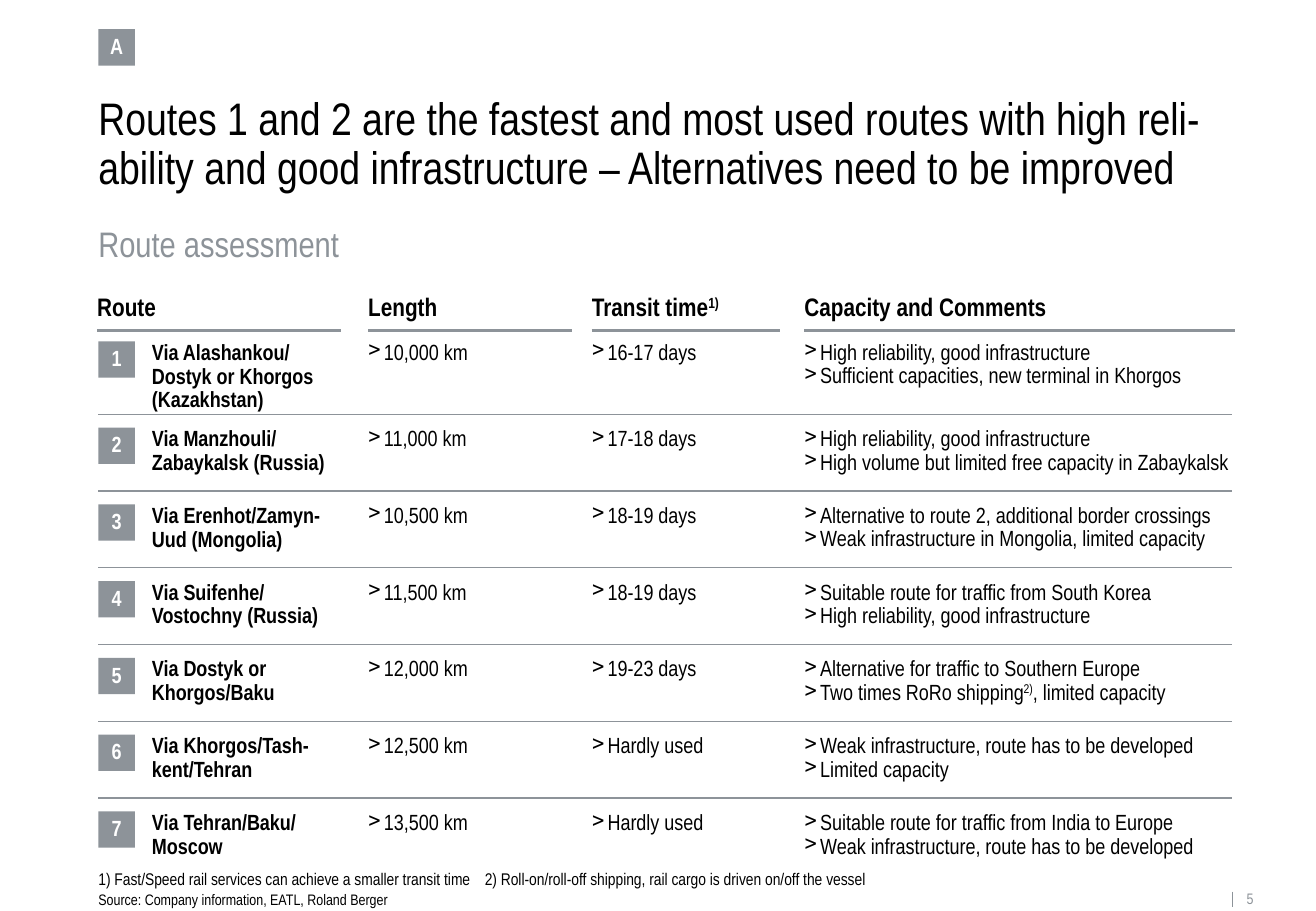
from lxml.etree import SubElement
from pptx import Presentation
from pptx.dml.color import RGBColor
from pptx.enum.shapes import MSO_CONNECTOR as Connector, MSO_SHAPE as Shape
from pptx.enum.text import MSO_ANCHOR as Anchor, PP_ALIGN as Align
from pptx.oxml.ns import qn
from pptx.util import Inches, Pt

COLORS = {"grey": "8D9399", "black": "000000", "white": "FFFFFF"}
FONT = "Arial Narrow"
LEFT, RIGHT = 0.81, 10.14
BADGE = 0.3
BULLET_INDENT = 0.13
NAME_LEFT, NAME_WIDTH = 1.25, 1.55
HEADER_TOP, HEADER_HEIGHT = 2.42, 0.31
FIRST_ROW_TOP, SECOND_ROW_TOP, ROW_STEP = 2.81, 3.52, 0.632
RULE_GAP = 0.11

COLUMNS = [
    ("Route", 0.8, 2.01),
    ("Length", 3.03, 1.68),
    ("Transit time^1)", 4.87, 1.55),
    ("Capacity and Comments", 6.62, 3.54),
]
ROUTES = [
    ("Via Alashankou/ Dostyk or Khorgos (Kazakhstan)", "10,000 km", "16-17 days",
     ["High reliability, good infrastructure", "Sufficient capacities, new terminal in Khorgos"]),
    ("Via Manzhouli/ Zabaykalsk (Russia)", "11,000 km", "17-18 days",
     ["High reliability, good infrastructure", "High volume but limited free capacity in Zabaykalsk"]),
    ("Via Erenhot/Zamyn-Uud (Mongolia)", "10,500 km", "18-19 days",
     ["Alternative to route 2, additional border crossings", "Weak infrastructure in Mongolia, limited capacity"]),
    ("Via Suifenhe/ Vostochny (Russia)", "11,500 km", "18-19 days",
     ["Suitable route for traffic from South Korea", "High reliability, good infrastructure"]),
    ("Via Dostyk or Khorgos/Baku", "12,000 km", "19-23 days",
     ["Alternative for traffic to Southern Europe", "Two times RoRo shipping^2)^, limited capacity"]),
    ("Via Khorgos/Tash-kent/Tehran", "12,500 km", "Hardly used",
     ["Weak infrastructure, route has to be developed", "Limited capacity"]),
    ("Via Tehran/Baku/ Moscow", "13,500 km", "Hardly used",
     ["Suitable route for traffic from India to Europe", "Weak infrastructure, route has to be developed"]),
]

presentation = Presentation()
presentation.slide_width, presentation.slide_height = Inches(10.83), Inches(7.5)
slide = presentation.slides.add_slide(presentation.slide_layouts[6])


def add_text(box, lines, size=13, color="black", bold=False, bullet=False, badge=False,
             anchor=Anchor.TOP, bottom=0, wrap=True, tab=None):
    bounds = [Inches(length) for length in box]
    if badge:
        shape = slide.shapes.add_shape(Shape.RECTANGLE, *bounds)
        shape.shadow.inherit = False
        shape.fill.solid()
        shape.fill.fore_color.rgb = RGBColor.from_string(COLORS["grey"])
        shape.line.fill.background()
    else:
        shape = slide.shapes.add_textbox(*bounds)
    frame = shape.text_frame
    frame.margin_left = frame.margin_right = frame.margin_top = 0
    frame.margin_bottom = Inches(bottom)
    frame.word_wrap = wrap
    frame.vertical_anchor = anchor
    for index, line in enumerate(lines):
        paragraph = frame.paragraphs[0] if index == 0 else frame.add_paragraph()
        properties = paragraph._p.get_or_add_pPr()
        if bullet:
            properties.set("marL", str(Inches(BULLET_INDENT)))
            properties.set("indent", str(-Inches(BULLET_INDENT)))
            SubElement(properties, qn("a:buChar"), char=">")
        if tab:
            tabs = SubElement(properties, qn("a:tabLst"))
            SubElement(tabs, qn("a:tab"), pos=str(Inches(tab)), algn="l")
        paragraph.line_spacing = 0.9
        paragraph.alignment = Align.CENTER if badge else Align.LEFT
        for part, text in enumerate(line.split("^")):
            if not text:
                continue
            run = paragraph.add_run()
            run.text = text
            run.font.name, run.font.size, run.font.bold = FONT, Pt(size), bold
            run.font.color.rgb = RGBColor.from_string(COLORS[color])
            if part % 2:
                run._r.get_or_add_rPr().set("baseline", "30000")


def add_rule(start_x, start_y, end_x, end_y, width=0.75):
    rule = slide.shapes.add_connector(
        Connector.STRAIGHT, *(Inches(length) for length in (start_x, start_y, end_x, end_y)))
    rule.line.color.rgb = RGBColor.from_string(COLORS["grey"])
    rule.line.width = Pt(width)
    SubElement(rule._element.spPr, qn("a:effectLst"))


badge_style = dict(color="white", bold=True, badge=True, anchor=Anchor.MIDDLE, wrap=False)

add_text((LEFT, 0.24, BADGE, BADGE), ["A"], **badge_style)
add_text((LEFT, 0.79, 9.34, 0.82),
         ["Routes 1 and 2 are the fastest and most used routes with high reli-ability "
          "and good infrastructure – Alternatives need to be improved"], size=27)
add_text((LEFT, 1.87, 9.34, 0.33), ["Route assessment"], size=21, color="grey")

for heading, left, width in COLUMNS:
    add_text((left, HEADER_TOP, width, HEADER_HEIGHT), [heading], size=15, bold=True,
             anchor=Anchor.BOTTOM, bottom=0.08)
    rule_y = HEADER_TOP + HEADER_HEIGHT - 0.01
    add_rule(left, rule_y, left + width, rule_y, width=1.5)

for index, (name, length, transit, comments) in enumerate(ROUTES):
    top = FIRST_ROW_TOP
    if index > 0:
        top = SECOND_ROW_TOP + (index - 1) * ROW_STEP
        add_rule(LEFT, top - RULE_GAP, RIGHT, top - RULE_GAP)
    add_text((LEFT, top, BADGE, BADGE), [str(index + 1)], **badge_style)
    add_text((NAME_LEFT, top, NAME_WIDTH, 0.41), [name], bold=True)
    for (_, left, width), lines in zip(COLUMNS[1:], ([length], [transit], comments)):
        add_text((left, top, width, 0.2 * len(lines)), lines, bullet=True)

add_text((LEFT, 7.17, RIGHT - LEFT, 0.15),
         ["1) Fast/Speed rail services can achieve a smaller transit time\t"
          "2) Roll-on/roll-off shipping, rail cargo is driven on/off the vessel"],
         size=10, anchor=Anchor.BOTTOM, tab=3.18)
add_text((LEFT, 7.34, 2.42, 0.14), ["Source: Company information, EATL, Roland Berger"],
         size=9, anchor=Anchor.BOTTOM, wrap=False)
add_rule(RIGHT, 7.34, RIGHT, 7.47)
add_text((10.26, 7.34, 0.13, 0.14), ["5"], size=9, color="grey", wrap=False)

presentation.save("out.pptx")
